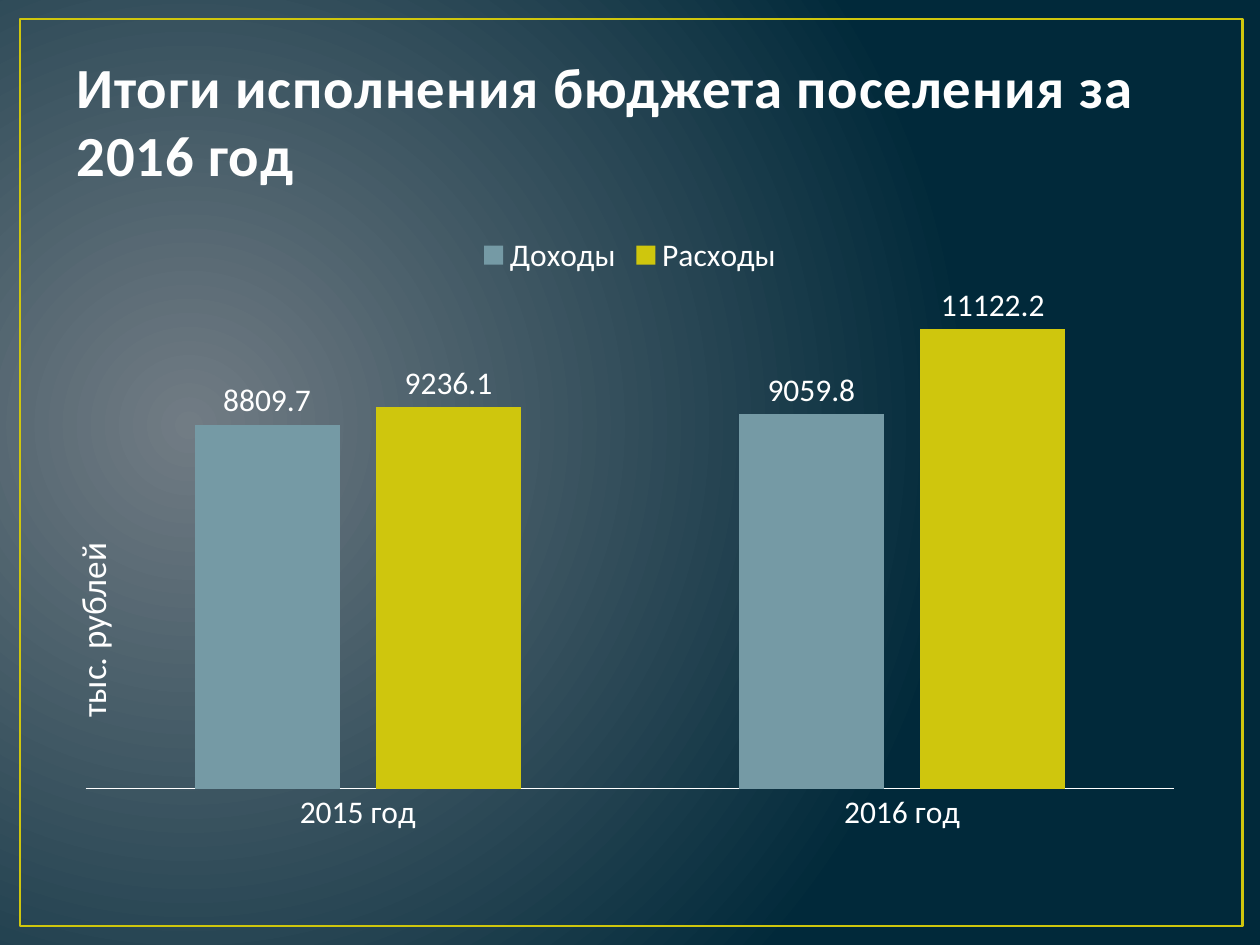
from lxml.etree import SubElement
from pptx import Presentation
from pptx.chart.data import CategoryChartData
from pptx.dml.color import RGBColor
from pptx.enum.chart import XL_CHART_TYPE, XL_LABEL_POSITION, XL_LEGEND_POSITION, XL_TICK_MARK
from pptx.enum.shapes import MSO_SHAPE
from pptx.enum.text import MSO_ANCHOR, MSO_AUTO_SIZE
from pptx.oxml import parse_xml
from pptx.oxml.ns import nsdecls, qn
from pptx.util import Inches, Pt

FONT = "Calibri"
COLORS = {
    "glow": "717C84",
    "night": "01293A",
    "title": "FEFEFE",
    "outline": "384F55",
    "text": "FFFFFF",
    "income": "759AA5",
    "spending": "CFC60D",
}
YEARS = ["2015 год", "2016 год"]
SERIES = [
    ("Доходы", "income", [8809.7, 9059.8]),
    ("Расходы", "spending", [9236.1, 11122.2]),
]


def color(name):
    """Return a palette colour."""
    return RGBColor.from_string(COLORS[name])


def style_font(font, size, name):
    """Set typeface, size and colour."""
    font.name = FONT
    font.size = Pt(size)
    font.color.rgb = color(name)


def paint_background(page):
    """Fill the page with a radial gradient centred left of the middle."""
    fill = page.background.fill
    fill.gradient()
    for stop, position, name in zip(fill.gradient_stops, (0, 1), ("glow", "night")):
        stop.position = position
        stop.color.rgb = color(name)
    gradient = page.element.find(".//" + qn("a:gradFill"))
    gradient.remove(gradient.find(qn("a:lin")))
    circle = SubElement(gradient, qn("a:path"), {"path": "circle"})
    SubElement(circle, qn("a:fillToRect"), l="15000", t="50000", r="85000", b="60000")


def add_frame(page):
    """Draw the thin border around the page."""
    frame = page.shapes.add_shape(
        MSO_SHAPE.RECTANGLE, Inches(0.16), Inches(0.15), Inches(9.7), Inches(7.2))
    frame.shadow.inherit = False
    frame.fill.background()
    frame.line.color.rgb = color("spending")
    frame.line.width = Pt(1.5)


def add_text(page, text, left, top, width, height, size, name):
    """Add a one-run text box and return the box and its run."""
    box = page.shapes.add_textbox(Inches(left), Inches(top), Inches(width), Inches(height))
    box.text_frame.word_wrap = True
    span = box.text_frame.paragraphs[0].add_run()
    span.text = text
    style_font(span.font, size, name)
    return box, span


def add_title(page):
    """Add the bold outlined heading."""
    box, span = add_text(page, "Итоги исполнения бюджета поселения за 2016 год",
                         0.51, 0.29, 9, 1.25, 32.4, "title")
    box.text_frame.vertical_anchor = MSO_ANCHOR.BOTTOM
    span.font.bold = True
    properties = span.font._element if hasattr(span.font, "_element") else span._r.get_or_add_rPr()
    properties.set("spc", "50")
    properties.insert(0, parse_xml(
        f'<a:ln {nsdecls("a")} w="{Pt(1.05)}"><a:solidFill>'
        f'<a:srgbClr val="{COLORS["outline"]}"/></a:solidFill></a:ln>'))


def add_unit_label(page):
    """Add the vertical label with the unit of measure."""
    box, _ = add_text(page, "тыс. рублей", -0.25, 4.59, 1.97, 0.44, 20, "text")
    box.text_frame.auto_size = MSO_AUTO_SIZE.SHAPE_TO_FIT_TEXT
    box.rotation = 270


def add_budget_chart(page):
    """Add the clustered columns of income and spending."""
    data = CategoryChartData(number_format="General")
    data.categories = YEARS
    for label, _, values in SERIES:
        data.add_series(label, values)
    chart = page.shapes.add_chart(
        XL_CHART_TYPE.COLUMN_CLUSTERED,
        Inches(0.5), Inches(1.75), Inches(9), Inches(4.95), data).chart
    style_font(chart.font, 18, "text")
    chart.has_title = False
    chart.has_legend = True
    chart.legend.position = XL_LEGEND_POSITION.TOP
    chart.legend.include_in_layout = False

    chart.value_axis.visible = False
    chart.value_axis.has_major_gridlines = False
    chart.value_axis.minimum_scale = 0
    chart.value_axis.maximum_scale = 12000
    chart.category_axis.major_tick_mark = XL_TICK_MARK.NONE
    chart.category_axis.format.line.color.rgb = color("text")
    chart.category_axis.format.line.width = Pt(0.75)

    plot = chart.plots[0]
    plot.gap_width = 150
    plot.overlap = -25
    plot.vary_by_categories = False
    for series, (_, name, _) in zip(plot.series, SERIES):
        series.format.fill.solid()
        series.format.fill.fore_color.rgb = color(name)
        series.data_labels.show_value = True
        series.data_labels.position = XL_LABEL_POSITION.OUTSIDE_END


def main():
    """Build the slide and save it."""
    deck = Presentation()
    deck.slide_width, deck.slide_height = Inches(10), Inches(7.5)
    page = deck.slides.add_slide(deck.slide_layouts[6])
    paint_background(page)
    add_frame(page)
    add_title(page)
    add_budget_chart(page)
    add_unit_label(page)
    deck.save("out.pptx")


if __name__ == "__main__":
    main()
